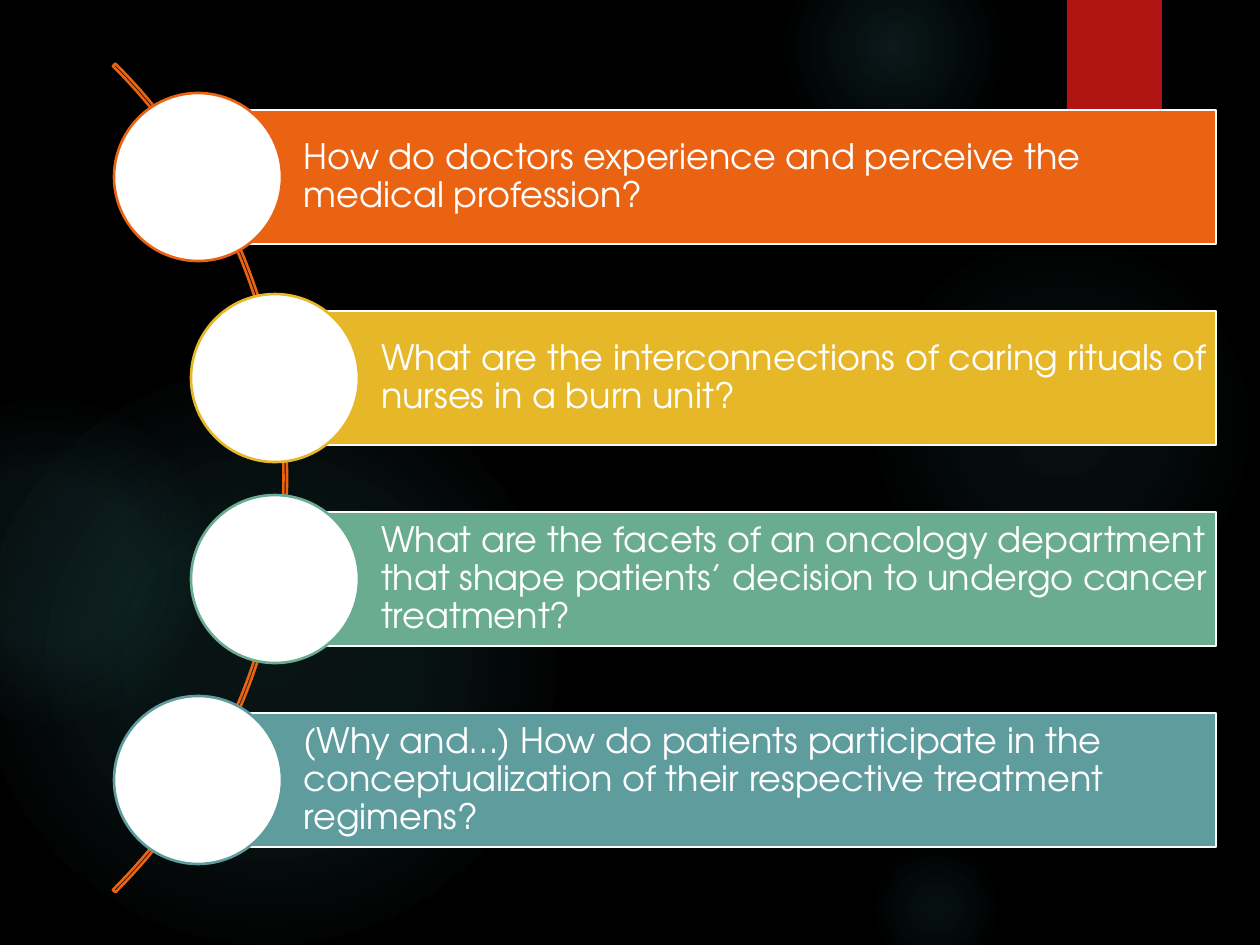
from dataclasses import dataclass

from lxml import etree
from pptx import Presentation
from pptx.dml.color import RGBColor
from pptx.enum.shapes import MSO_SHAPE
from pptx.enum.text import MSO_ANCHOR, PP_ALIGN
from pptx.oxml.ns import qn
from pptx.shapes.autoshape import Shape
from pptx.slide import Slide
from pptx.util import Emu, Pt

RECTANGLE = MSO_SHAPE.RECTANGLE
OVAL = MSO_SHAPE.OVAL
BLOCK_ARC = MSO_SHAPE.BLOCK_ARC
MIDDLE = MSO_ANCHOR.MIDDLE
LEFT = PP_ALIGN.LEFT

BLACK = RGBColor(0x00, 0x00, 0x00)
WHITE = RGBColor(0xFF, 0xFF, 0xFF)
RED = RGBColor(0xB0, 0x15, 0x13)
ORANGE = RGBColor(0xEA, 0x63, 0x12)
YELLOW = RGBColor(0xE6, 0xB7, 0x29)
GREEN = RGBColor(0x6A, 0xAC, 0x90)
TEAL = RGBColor(0x5F, 0x9C, 0x9D)
GLOW_COLOR = RGBColor(0x50, 0xB9, 0xC1)

FONT = "TeX Gyre Adventor"
PX_PER_INCH = 126
EMU_PER_INCH = 914400

BAR_TOP = 110
BAR_HEIGHT = 134
BAR_STEP = 201
BAR_RIGHT = 1216
OUTER_LEFT = 198
INNER_LEFT = 275
CIRCLE_SIZE = 168
ARC_SIZE = 1172
ARC_LEFT = -885


@dataclass(frozen=True)
class Glow:
    left: int
    top: int
    size: int
    center_alpha: int
    middle_alpha: int
    edge: int


@dataclass(frozen=True)
class Question:
    text: str
    left: int
    color: RGBColor


GLOWS = [
    Glow(868, 231, 388, 7, 6, 69),
    Glow(784, -63, 220, 14, 7, 73),
    Glow(868, 840, 136, 9, 5, 66),
    Glow(-21, 368, 577, 11, 10, 75),
    Glow(-116, 399, 325, 8, 8, 72),
]

QUESTIONS = [
    Question("How do doctors experience and perceive the medical profession?",
             OUTER_LEFT, ORANGE),
    Question("What are the interconnections of caring rituals of nurses in a burn unit?",
             INNER_LEFT, YELLOW),
    Question("What are the facets of an oncology department that shape patients’ "
             "decision to undergo cancer treatment?", INNER_LEFT, GREEN),
    Question("(Why and…) How do patients participate in the conceptualization of "
             "their respective treatment regimens?", OUTER_LEFT, TEAL),
]


def px(value: int) -> Emu:
    return Emu(round(value * EMU_PER_INCH / PX_PER_INCH))


def add_shape(slide: Slide, kind: MSO_SHAPE, left: int, top: int, width: int, height: int,
              fill: RGBColor | None = None, line: RGBColor | None = None) -> Shape:
    shape = slide.shapes.add_shape(kind, px(left), px(top), px(width), px(height))
    shape.shadow.inherit = False
    if fill is None:
        shape.fill.background()
    else:
        shape.fill.solid()
        shape.fill.fore_color.rgb = fill
    if line is None:
        shape.line.fill.background()
    else:
        shape.line.color.rgb = line
        shape.line.width = Pt(1.5)
    return shape


def add_glow(slide: Slide, glow: Glow) -> None:
    shape = add_shape(slide, OVAL, glow.left, glow.top, glow.size, glow.size)
    gradient = etree.Element(qn("a:gradFill"), rotWithShape="1")
    stops = etree.SubElement(gradient, qn("a:gsLst"))
    for position, alpha in ((0, glow.center_alpha), (36, glow.middle_alpha), (glow.edge, 0)):
        stop = etree.SubElement(stops, qn("a:gs"), pos=str(position * 1000))
        color = etree.SubElement(stop, qn("a:srgbClr"), val=str(GLOW_COLOR))
        etree.SubElement(color, qn("a:alpha"), val=str(alpha * 1000))
    circle = etree.SubElement(gradient, qn("a:path"), {"path": "circle"})
    etree.SubElement(circle, qn("a:fillToRect"),
                     {side: "50000" for side in ("l", "t", "r", "b")})
    properties = shape.element.spPr
    properties.replace(properties.find(qn("a:noFill")), gradient)


def add_arc(slide: Slide) -> None:
    center = BAR_TOP + (BAR_STEP * (len(QUESTIONS) - 1) + BAR_HEIGHT) // 2
    arc = add_shape(slide, BLOCK_ARC, ARC_LEFT, center - ARC_SIZE // 2,
                    ARC_SIZE, ARC_SIZE, line=ORANGE)
    for index, value in enumerate((189, 27, 0.003)):
        arc.adjustments[index] = value


def add_question(slide: Slide, question: Question, top: int) -> None:
    bar = add_shape(slide, RECTANGLE, question.left, top, BAR_RIGHT - question.left,
                    BAR_HEIGHT, question.color, WHITE)
    frame = bar.text_frame
    frame.word_wrap = True
    frame.vertical_anchor = MIDDLE
    frame.margin_left = px(106)
    frame.margin_top = frame.margin_right = frame.margin_bottom = px(7)
    paragraph = frame.paragraphs[0]
    paragraph.text = question.text
    paragraph.alignment = LEFT
    paragraph.line_spacing = 0.9
    paragraph.font.name = FONT
    paragraph.font.size = Pt(20)
    paragraph.font.color.rgb = WHITE
    add_shape(slide, OVAL, question.left - CIRCLE_SIZE // 2,
              top + (BAR_HEIGHT - CIRCLE_SIZE) // 2, CIRCLE_SIZE, CIRCLE_SIZE,
              WHITE, question.color)


def main() -> None:
    presentation = Presentation()
    presentation.slide_width = px(1260)
    presentation.slide_height = px(945)
    slide = presentation.slides.add_slide(presentation.slide_layouts[6])
    slide.background.fill.solid()
    slide.background.fill.fore_color.rgb = BLACK
    for glow in GLOWS:
        add_glow(slide, glow)
    add_shape(slide, RECTANGLE, 1067, 0, 95, 151, RED)
    add_arc(slide)
    for index, question in enumerate(QUESTIONS):
        add_question(slide, question, BAR_TOP + index * BAR_STEP)
    presentation.save("out.pptx")


if __name__ == "__main__":
    main()
